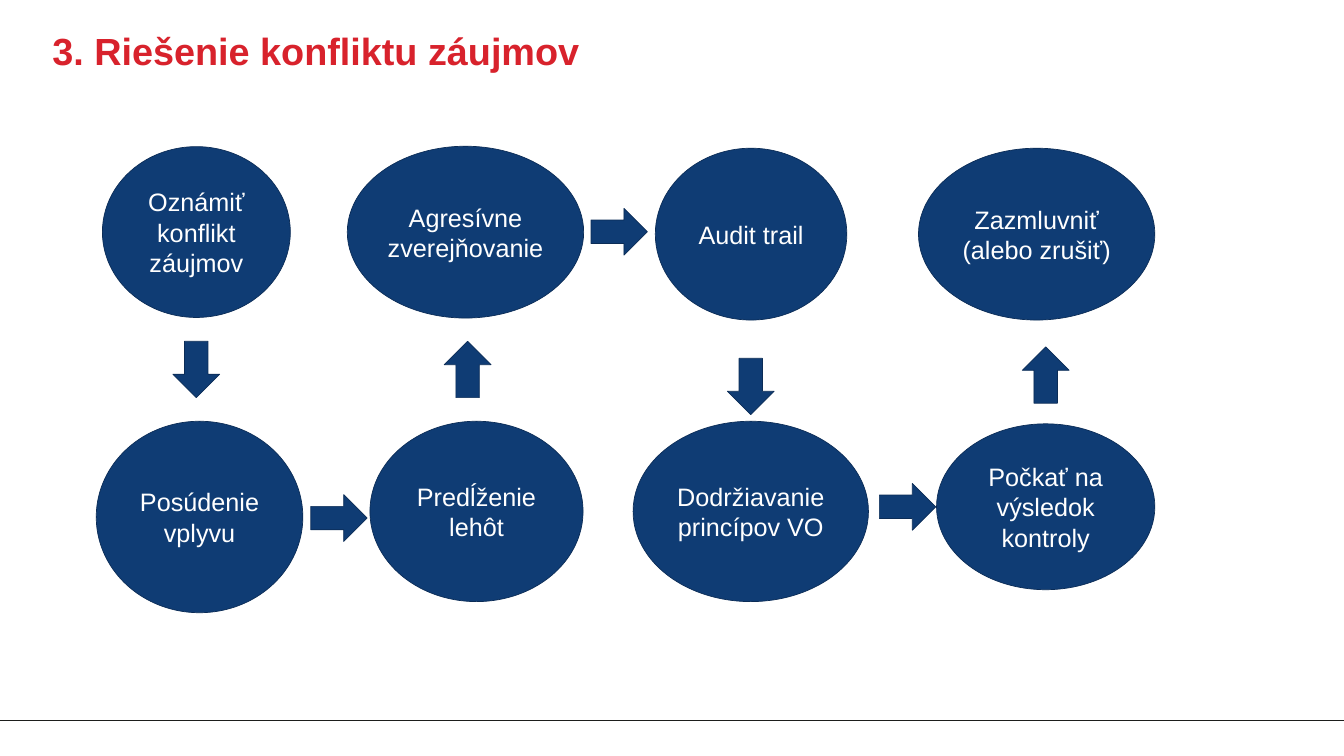
"""Builds the slide on the steps for resolving a conflict of interest."""
from dataclasses import dataclass

from lxml import etree
from pptx import Presentation
from pptx.dml.color import RGBColor
from pptx.enum.shapes import MSO_CONNECTOR, MSO_SHAPE
from pptx.enum.text import MSO_ANCHOR, PP_ALIGN
from pptx.oxml.ns import qn
from pptx.util import Cm, Pt

OVAL, ARROW = MSO_SHAPE.OVAL, MSO_SHAPE.DOWN_ARROW
STRAIGHT = MSO_CONNECTOR.STRAIGHT
MIDDLE, TOP = MSO_ANCHOR.MIDDLE, MSO_ANCHOR.TOP
CENTER, LEFT = PP_ALIGN.CENTER, PP_ALIGN.LEFT

SLIDE_WIDTH, SLIDE_HEIGHT = 67.72, 38.1
FOOTER_TOP = 36.3

HEADING = "3. Riešenie konfliktu záujmov"
HEADING_BOX = (2.64, 1.4, 60.73, 5.31)

STEPS = [
    ("Oznámiť konflikt záujmov", (5.16, 7.39, 9.47, 8.61)),
    ("Posúdenie vplyvu", (4.85, 21.23, 10.41, 9.65)),
    ("Predĺženie lehôt", (18.64, 21.23, 10.74, 9.09)),
    ("Agresívne zverejňovanie", (17.5, 7.37, 11.91, 8.66)),
    ("Audit trail", (33.02, 7.47, 9.65, 8.66)),
    ("Dodržiavanie princípov VO", (31.9, 21.23, 11.86, 9.09)),
    ("Počkať na výsledok kontroly", (47.19, 21.36, 11, 8.36)),
    ("Zazmluvniť (alebo zrušiť)", (46.28, 7.47, 11.91, 8.66)),
]

TURNS = {"down": 0, "up": 180, "right": 270}
ARROWS = [
    ("down", 8.71, 17.2),
    ("right", 15.9, 24.69),
    ("up", 22.38, 17.2),
    ("right", 30.02, 10.26),
    ("down", 36.65, 18.06),
    ("right", 44.55, 24.12),
    ("up", 51.51, 17.48),
]
ARROW_SIZE = (2.36, 2.84)


@dataclass(frozen=True)
class Theme:
    """Colours, font and sizes of the slide."""
    font: str = "Arial"
    heading: RGBColor = RGBColor(0xD8, 0x22, 0x2C)
    fill: RGBColor = RGBColor(0x0F, 0x3C, 0x74)
    edge: RGBColor = RGBColor(0x0B, 0x2C, 0x56)
    ink: RGBColor = RGBColor(0x1D, 0x1E, 0x1C)
    light: RGBColor = RGBColor(0xFF, 0xFF, 0xFF)
    heading_size: Pt = Pt(54)
    step_size: Pt = Pt(36)
    edge_width: Pt = Pt(1)
    ink_width: Pt = Pt(1.5)


THEME = Theme()


def write(frame, words, size, color, align, anchor, bold=False):
    frame.word_wrap = True
    frame.vertical_anchor = anchor
    paragraph = frame.paragraphs[0]
    paragraph.text = words
    paragraph.alignment = align
    font = paragraph.font
    font.name, font.size, font.bold = THEME.font, size, bold
    font.color.rgb = color


def add_heading(slide):
    frame = slide.shapes.add_textbox(*map(Cm, HEADING_BOX)).text_frame
    frame.margin_left = frame.margin_right = 0
    frame.margin_top = frame.margin_bottom = 0
    write(frame, HEADING, THEME.heading_size, THEME.heading, LEFT, TOP, bold=True)


def add_solid(slide, kind, box):
    solid = slide.shapes.add_shape(kind, *map(Cm, box))
    solid.shadow.inherit = False
    solid.fill.solid()
    solid.fill.fore_color.rgb = THEME.fill
    solid.line.color.rgb = THEME.edge
    solid.line.width = THEME.edge_width
    return solid


def add_footer_rule(slide):
    rule = slide.shapes.add_connector(
        STRAIGHT, 0, Cm(FOOTER_TOP), Cm(SLIDE_WIDTH), Cm(FOOTER_TOP))
    rule.line.color.rgb = THEME.ink
    rule.line.width = THEME.ink_width
    etree.SubElement(rule._element.spPr, qn("a:effectLst"))


def main():
    deck = Presentation()
    deck.slide_width, deck.slide_height = Cm(SLIDE_WIDTH), Cm(SLIDE_HEIGHT)
    slide = deck.slides.add_slide(deck.slide_layouts[6])
    add_footer_rule(slide)
    add_heading(slide)
    for words, box in STEPS:
        step = add_solid(slide, OVAL, box)
        write(step.text_frame, words, THEME.step_size, THEME.light, CENTER, MIDDLE)
    for direction, left, top in ARROWS:
        arrow = add_solid(slide, ARROW, (left, top, *ARROW_SIZE))
        arrow.rotation = TURNS[direction]
    deck.save("out.pptx")


if __name__ == "__main__":
    main()
